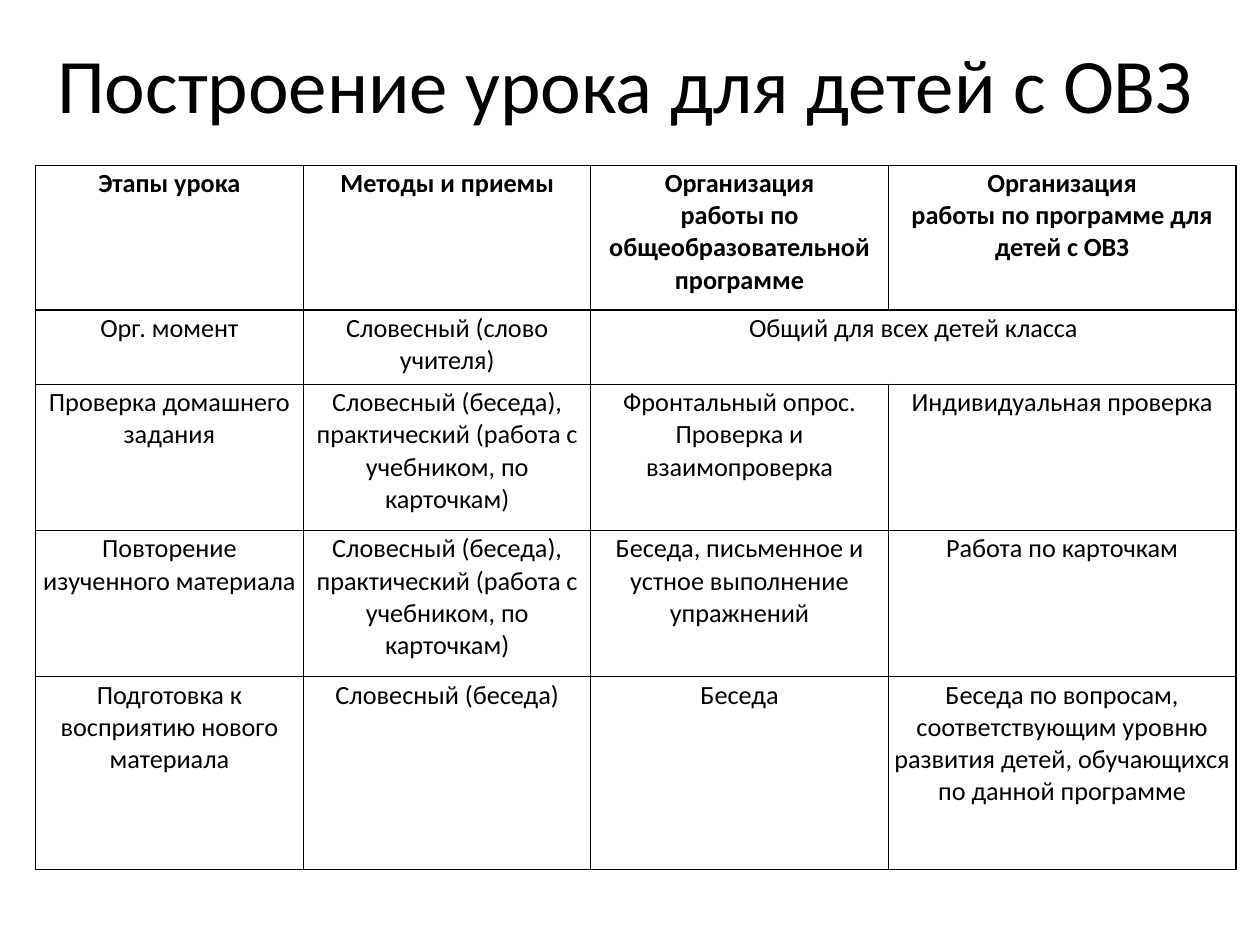
import pptx
import pptx.dml.color
import pptx.enum.text
import pptx.oxml
import pptx.oxml.ns
import pptx.util
from collections import namedtuple

Box = namedtuple("Box", "left top width height")

INK = "000000"
PAPER = "FFFFFF"
FONT = "Calibri"
TITLE_SHARES = Box(0.02, 0.004, 0.953, 0.1667)
TABLE_SHARES = Box(0.028, 0.1747, 0.953, 0.7453)
COLUMN_WEIGHTS = [2.13, 2.28, 2.36, 2.76]
ROW_WEIGHTS = [1.15, 0.59, 1.16, 1.16, 1.53]
CELL_MARGIN = pptx.util.Inches(0.02)
BORDER_WIDTH = pptx.util.Pt(0.75)

PRACTICE = "Словесный (беседа), практический (работа с учебником, по карточкам)"
LESSON_STAGES = [
    ["Этапы урока", "Методы и приемы",
     "Организация\nработы по общеобразовательной программе",
     "Организация\nработы по программе для детей с ОВЗ"],
    ["Орг. момент", "Словесный (слово учителя)", "Общий для всех детей класса", None],
    ["Проверка домашнего задания", PRACTICE,
     "Фронтальный опрос. Проверка и взаимопроверка", "Индивидуальная проверка"],
    ["Повторение изученного материала", PRACTICE,
     "Беседа, письменное и устное выполнение упражнений", "Работа по карточкам"],
    ["Подготовка к восприятию нового материала", "Словесный (беседа)", "Беседа",
     "Беседа по вопросам, соответствующим уровню развития детей, "
     "обучающихся по данной программе"],
]


def color(value):
    return pptx.dml.color.RGBColor.from_string(value)


def place(deck, shares):
    return Box(round(shares.left * deck.slide_width),
               round(shares.top * deck.slide_height),
               round(shares.width * deck.slide_width),
               round(shares.height * deck.slide_height))


def divide(length, weights):
    return [round(length * weight / sum(weights)) for weight in weights]


def write_text(frame, text, size, bold=False, ink=INK):
    frame.word_wrap = True
    for index, line in enumerate(text.split("\n")):
        para = frame.add_paragraph() if index else frame.paragraphs[0]
        para.alignment = pptx.enum.text.PP_ALIGN.CENTER
        span = para.add_run()
        span.text = line
        span.font.name = FONT
        span.font.size = pptx.util.Pt(size)
        span.font.bold = bold
        span.font.color.rgb = color(ink)


def style_cell(cell):
    cell.margin_left = cell.margin_right = CELL_MARGIN
    cell.margin_top = cell.margin_bottom = CELL_MARGIN
    cell.vertical_anchor = pptx.enum.text.MSO_ANCHOR.TOP
    cell.fill.solid()
    cell.fill.fore_color.rgb = color(PAPER)
    properties = cell._tc.get_or_add_tcPr()
    namespace = pptx.oxml.ns.nsdecls("a")
    for index, side in enumerate(["lnL", "lnR", "lnT", "lnB"]):
        properties.insert(index, pptx.oxml.parse_xml(
            f'<a:{side} {namespace} w="{BORDER_WIDTH}"><a:solidFill>'
            f'<a:srgbClr val="{INK}"/></a:solidFill></a:{side}>'))


def add_title(page, box):
    frame = page.shapes.add_textbox(*box).text_frame
    frame.vertical_anchor = pptx.enum.text.MSO_ANCHOR.MIDDLE
    write_text(frame, "Построение урока для детей с ОВЗ", size=44)


def add_lesson_table(page, box):
    table = page.shapes.add_table(len(ROW_WEIGHTS), len(COLUMN_WEIGHTS), *box).table
    table.first_row = table.horz_banding = False
    for column, width in zip(table.columns, divide(box.width, COLUMN_WEIGHTS)):
        column.width = width
    for row, height in zip(table.rows, divide(box.height, ROW_WEIGHTS)):
        row.height = height
    for row_index, stage in enumerate(LESSON_STAGES):
        for column_index, text in enumerate(stage):
            cell = table.cell(row_index, column_index)
            style_cell(cell)
            if text is None:
                table.cell(row_index, column_index - 1).merge(cell)
            else:
                write_text(cell.text_frame, text, size=15, bold=row_index == 0)


def main():
    deck = pptx.Presentation()
    deck.slide_width = pptx.util.Inches(10)
    deck.slide_height = pptx.util.Inches(7.5)
    page = deck.slides.add_slide(deck.slide_layouts[6])
    page.background.fill.solid()
    page.background.fill.fore_color.rgb = color(PAPER)
    add_title(page, place(deck, TITLE_SHARES))
    add_lesson_table(page, place(deck, TABLE_SHARES))
    deck.save("out.pptx")


if __name__ == "__main__":
    main()
